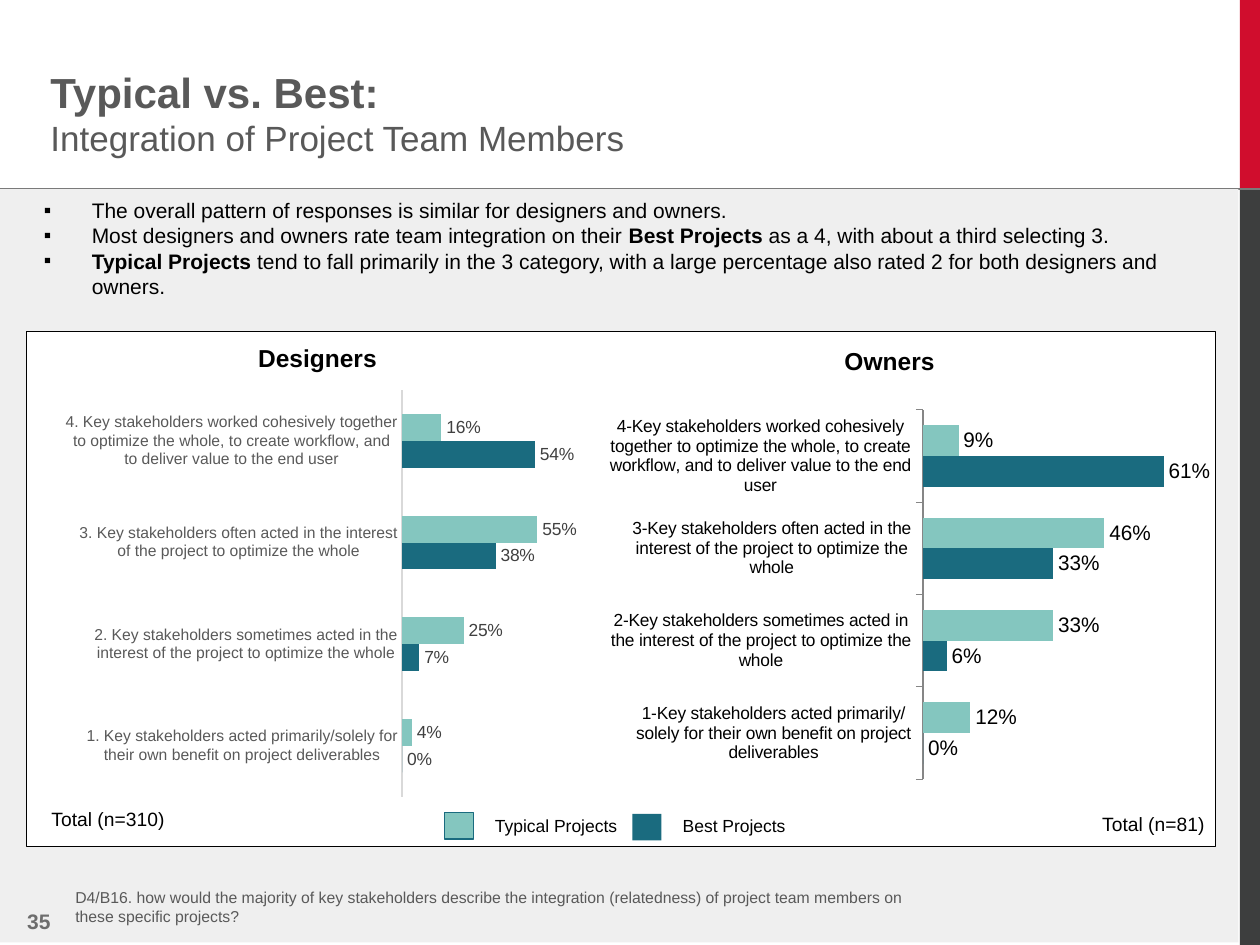
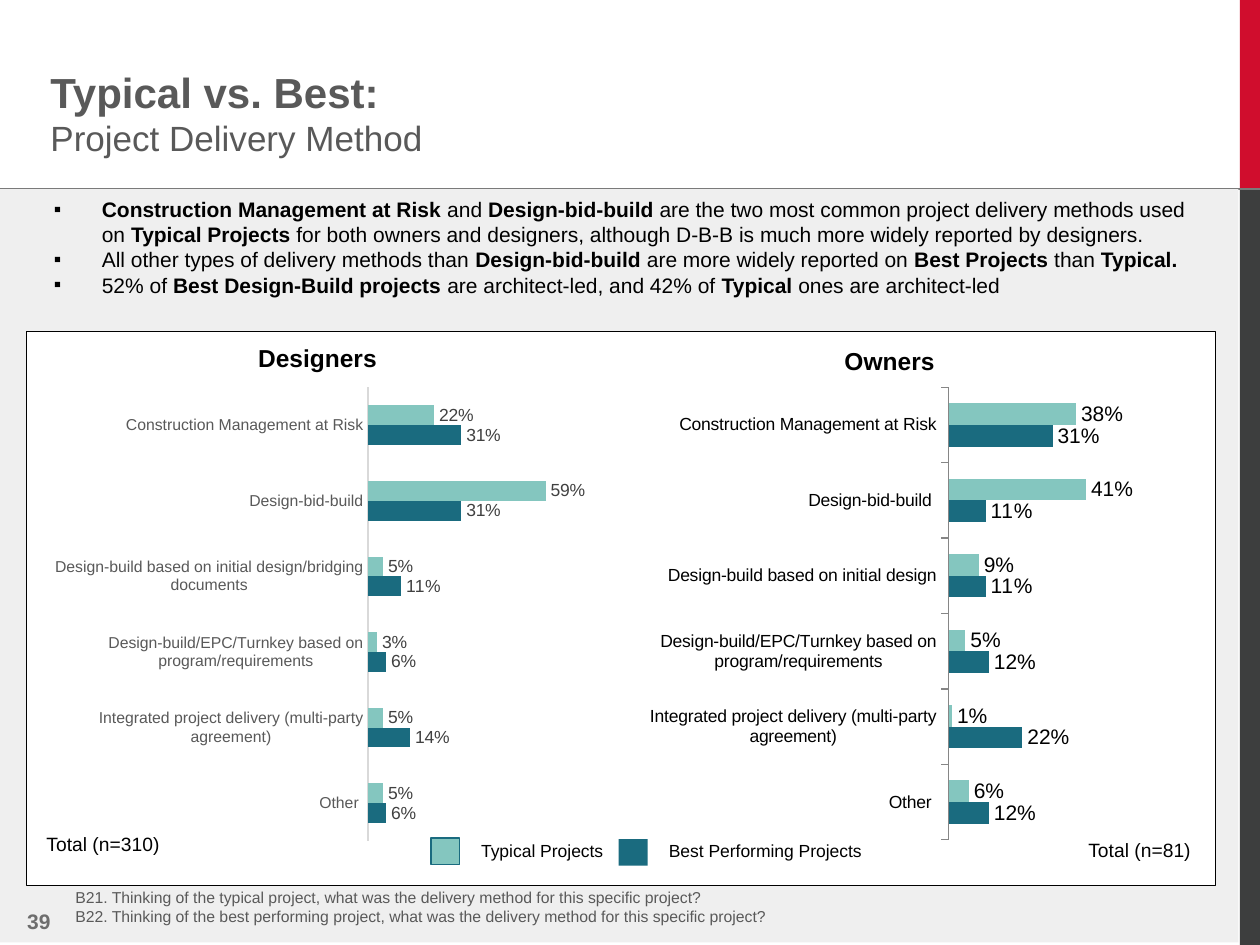
from lxml import etree
from pptx import Presentation
from pptx.chart.data import CategoryChartData
from pptx.dml.color import RGBColor
from pptx.enum.chart import XL_CHART_TYPE, XL_LABEL_POSITION, XL_TICK_MARK
from pptx.enum.shapes import MSO_CONNECTOR, MSO_SHAPE
from pptx.enum.text import MSO_ANCHOR, MSO_AUTO_SIZE, PP_ALIGN
from pptx.oxml.ns import qn
from pptx.util import Inches, Pt

RECTANGLE = MSO_SHAPE.RECTANGLE
BAR = XL_CHART_TYPE.BAR_CLUSTERED
LABEL_END = XL_LABEL_POSITION.OUTSIDE_END
TICK_OUT, TICK_NONE = XL_TICK_MARK.OUTSIDE, XL_TICK_MARK.NONE
LEFT, CENTER, RIGHT = PP_ALIGN.LEFT, PP_ALIGN.CENTER, PP_ALIGN.RIGHT

FONT = "Arial"
BLACK = RGBColor(0x00, 0x00, 0x00)
WHITE = RGBColor(0xFF, 0xFF, 0xFF)
RED = RGBColor(0xD0, 0x0D, 0x2D)
CHARCOAL = RGBColor(0x3D, 0x3E, 0x3E)
RULE_GRAY = RGBColor(0x7A, 0x7A, 0x7A)
PALE_GRAY = RGBColor(0xEF, 0xEF, 0xEF)
TEXT_GRAY = RGBColor(0x59, 0x59, 0x59)
NUMBER_GRAY = RGBColor(0x6D, 0x6D, 0x6D)
VALUE_GRAY = RGBColor(0x40, 0x40, 0x40)
AXIS_GRAY = RGBColor(0xD9, 0xD9, 0xD9)
OWNER_AXIS = RGBColor(0x86, 0x86, 0x86)
TYPICAL = RGBColor(0x84, 0xC6, 0xBF)
BEST = RGBColor(0x1A, 0x6B, 0x7F)

# Content: bold words stand between ** marks; chart rows are
# (answer, typical, best) from top to bottom
SLIDES = [
    {
        "number": "35",
        "topic": "Integration of Project Team Members",
        "points": [
            "The overall pattern of responses is similar for designers and owners.",
            "Most designers and owners rate team integration on their **Best Projects** "
            "as a 4, with about a third selecting 3.",
            "**Typical Projects** tend to fall primarily in the 3 category, with a large "
            "percentage also rated 2 for both designers and owners.",
        ],
        "points_at": (0.25, 1.52, 9.48, 1.31),
        "panel_height": 4.09,
        "designers": [
            ("4. Key stakeholders worked cohesively together to optimize the whole, "
             "to create workflow, and to deliver value to the end user", 0.16, 0.54),
            ("3. Key stakeholders often acted in the interest of the project "
             "to optimize the whole", 0.55, 0.38),
            ("2. Key stakeholders sometimes acted in the interest of the project "
             "to optimize the whole", 0.25, 0.07),
            ("1. Key stakeholders acted primarily/solely for their own benefit "
             "on project deliverables", 0.04, 0),
        ],
        "designers_at": (0.52, 3.03, 4.32, 3.36),
        "designers_max": 0.8,
        "owners": [
            ("4-Key stakeholders worked cohesively together to optimize the whole, "
             "to create workflow, and to deliver value to the end user", 0.09, 0.61),
            ("3-Key stakeholders often acted in the interest of the project "
             "to optimize the whole", 0.46, 0.33),
            ("2-Key stakeholders sometimes acted in the interest of the project "
             "to optimize the whole", 0.33, 0.06),
            ("1-Key stakeholders acted primarily/solely for their own benefit "
             "on project deliverables", 0.12, 0),
        ],
        "owners_at": (4.84, 3.09, 4.86, 3.39),
        "owners_plot": (0.506, 0.048, 0.456, 0.865),
        "owners_gap": 100,
        "best_label": "Best Projects",
        "legend_at": (3.53, 6.45),
        "designers_total_at": (0.31, 6.36),
        "owners_total_at": (8.18, 6.4),
        "questions": [
            "D4/B16. how would the majority of key stakeholders describe the integration "
            "(relatedness) of project team members on these specific projects?",
        ],
    },
    {
        "number": "39",
        "topic": "Project Delivery Method",
        "points": [
            "**Construction Management at Risk** and **Design-bid-build** are the two most "
            "common project delivery methods used on **Typical Projects** for both owners "
            "and designers, although D-B-B is much more widely reported by designers.",
            "All other types of delivery methods than **Design-bid-build **are more widely "
            "reported on **Best Projects** than **Typical.**",
            "52% of **Best Design-Build projects **are architect-led, and 42% of "
            "**Typical **ones are architect-led",
        ],
        "points_at": (0.33, 1.51, 9.31, 0.91),
        "panel_height": 4.4,
        "designers": [
            ("Construction Management at Risk", 0.22, 0.31),
            ("Design-bid-build", 0.59, 0.31),
            ("Design-build based on initial design/bridging documents", 0.05, 0.11),
            ("Design-build/EPC/Turnkey based on program/requirements", 0.03, 0.06),
            ("Integrated project delivery (multi-party agreement)", 0.05, 0.14),
            ("Other ", 0.05, 0.06),
        ],
        "designers_at": (0.35, 3, 4.33, 3.75),
        "designers_max": 0.7,
        "owners": [
            ("Construction Management at Risk", 0.38, 0.31),
            ("Design-bid-build ", 0.41, 0.11),
            ("Design-build based on initial design", 0.09, 0.11),
            ("Design-build/EPC/Turnkey based on program/requirements", 0.05, 0.12),
            ("Integrated project delivery (multi-party agreement)", 0.01, 0.22),
            ("Other ", 0.06, 0.12),
        ],
        "owners_at": (5.07, 3, 4.41, 3.74),
        "owners_plot": None,
        "owners_gap": 150,
        "best_label": "Best Performing Projects",
        "legend_at": (3.42, 6.65),
        "designers_total_at": (0.27, 6.56),
        "owners_total_at": (8.07, 6.6),
        "questions": [
            "B21. Thinking of the typical project, what was the delivery method "
            "for this specific project?",
            "B22. Thinking of the best performing project, what was the delivery method "
            "for this specific project?",
        ],
    },
]


def inches(lengths):
    return [Inches(length) for length in lengths]


def style(font, size, color, bold=False):
    font.name, font.size, font.bold = FONT, Pt(size), bold
    font.color.rgb = color


def add_box(slide, at, fill, line=None):
    box = slide.shapes.add_shape(RECTANGLE, *inches(at))
    box.shadow.inherit = False
    box.fill.solid()
    box.fill.fore_color.rgb = fill
    if line is None:
        box.line.fill.background()
    else:
        box.line.color.rgb = line
        box.line.width = Pt(0.75)


def add_text(slide, at, paragraphs, size, color=BLACK, bold=False, align=LEFT):
    frame = slide.shapes.add_textbox(*inches(at)).text_frame
    frame.word_wrap = True
    frame.text = "\n".join(paragraphs)
    for paragraph in frame.paragraphs:
        paragraph.alignment = align
        style(paragraph.runs[0].font, size, color, bold)


def add_frame(slide):
    """Side bands, rule under the title and pale content area."""
    add_box(slide, (9.84, 0, 0.16, 1.5), RED)
    add_box(slide, (9.84, 1.5, 0.16, 6), CHARCOAL)
    rule = slide.shapes.add_connector(MSO_CONNECTOR.STRAIGHT, *inches((10, 1.5, 0, 1.5)))
    rule.line.color.rgb = RULE_GRAY
    rule.line.width = Pt(1)
    etree.SubElement(rule._element.spPr, qn("a:effectLst"))
    add_box(slide, (0, 1.5, 9.83, 5.98), PALE_GRAY)


def add_title(slide, topic):
    title = slide.shapes.title
    title.left, title.top, title.width, title.height = inches((0.3, 0.47, 9.26, 0.84))
    frame = title.text_frame
    frame.text = "Typical vs. Best:\n" + topic
    frame.word_wrap = True
    frame.auto_size = MSO_AUTO_SIZE.NONE
    frame.vertical_anchor = MSO_ANCHOR.BOTTOM
    for paragraph, size, bold in zip(frame.paragraphs, (24, 20), (True, False)):
        paragraph.alignment = LEFT
        style(paragraph.runs[0].font, size, TEXT_GRAY, bold)


def add_points(slide, at, points):
    frame = slide.shapes.add_textbox(*inches(at)).text_frame
    frame.word_wrap = True
    for index, point in enumerate(points):
        paragraph = frame.add_paragraph() if index else frame.paragraphs[0]
        properties = paragraph._p.get_or_add_pPr()
        properties.set("marL", str(Inches(0.38)))
        properties.set("indent", str(-Inches(0.38)))
        bullet_color = etree.SubElement(properties, qn("a:buClr"))
        etree.SubElement(bullet_color, qn("a:srgbClr"), val=str(BLACK))
        etree.SubElement(properties, qn("a:buFont"), typeface=FONT)
        etree.SubElement(properties, qn("a:buChar"), char="▪")
        for part, words in enumerate(point.split("**")):
            if words:
                run = paragraph.add_run()
                run.text = words
                style(run.font, 12, BLACK, bold=part % 2 == 1)


def add_bars(slide, at, answers, series, gap, maximum, value_size, value_color):
    """Bar chart of (name, values, color) series without legend or value axis."""
    data = CategoryChartData(number_format="0%")
    data.categories = answers
    for name, values, _ in series:
        data.add_series(name, values)
    chart = slide.shapes.add_chart(BAR, *inches(at), data).chart
    chart.has_title = chart.has_legend = False
    style(chart.font, 10, BLACK)
    chart.value_axis.visible = False
    chart.value_axis.has_major_gridlines = False
    chart.value_axis.minimum_scale = 0
    chart.value_axis.maximum_scale = maximum
    plot = chart.plots[0]
    plot.gap_width = gap
    plot.vary_by_categories = False
    for bars, (_, _, color) in zip(plot.series, series):
        bars.invert_if_negative = False
        bars.format.fill.solid()
        bars.format.fill.fore_color.rgb = color
        labels = bars.data_labels
        labels.show_value = True
        labels.number_format, labels.number_format_is_linked = "0%", False
        labels.position = LABEL_END
        style(labels.font, value_size, value_color)
    return chart


def style_answers(chart, size, color, line_color, tick):
    axis = chart.category_axis
    axis.has_major_gridlines = False
    axis.major_tick_mark, axis.minor_tick_mark = tick, TICK_NONE
    axis.format.line.color.rgb = line_color
    axis.format.line.width = Pt(0.75)
    style(axis.tick_labels.font, size, color)


def place_plot(chart, fractions):
    """Fix the inner plot area as fractions of the chart."""
    plot_area = chart._chartSpace.chart.plotArea
    for automatic in plot_area.findall(qn("c:layout")):
        plot_area.remove(automatic)
    layout = etree.Element(qn("c:layout"))
    plot_area.insert(0, layout)
    manual = etree.SubElement(layout, qn("c:manualLayout"))
    settings = [("layoutTarget", "inner"), ("xMode", "edge"), ("yMode", "edge")]
    for tag, value in settings + list(zip("xywh", fractions)):
        etree.SubElement(manual, qn("c:" + tag), val=str(value))


def add_legend(slide, left, top, best_label):
    entries = [("Typical Projects", TYPICAL, BEST, 0, 0),
               (best_label, BEST, None, 1.49, 0.01)]
    for label, color, line, across, down in entries:
        add_box(slide, (left + across, top + down, 0.23, 0.21), color, line)
        add_text(slide, (left + across + 0.3, top - 0.03, 1.75, 0.27), [label], 10)


def add_charts(slide, content):
    # Designers: the axis runs upwards, so rows and series are reversed
    answers, typical, best = zip(*reversed(content["designers"]))
    series = [(content["best_label"], best, BEST), ("Typical Projects", typical, TYPICAL)]
    designers = add_bars(slide, content["designers_at"], answers, series, 182,
                         content["designers_max"], 10, VALUE_GRAY)
    style_answers(designers, 9, TEXT_GRAY, AXIS_GRAY, TICK_NONE)

    # Owners
    answers, typical, best = zip(*content["owners"])
    series = [("Typical Projects", typical, TYPICAL), (content["best_label"], best, BEST)]
    owners = add_bars(slide, content["owners_at"], answers, series,
                      content["owners_gap"], 0.7, 12, BLACK)
    style_answers(owners, 10, BLACK, OWNER_AXIS, TICK_OUT)
    owners.category_axis.reverse_order = True
    if content["owners_plot"]:
        place_plot(owners, content["owners_plot"])


def build_slide(deck, content):
    slide = deck.slides.add_slide(deck.slide_layouts[5])
    add_frame(slide)
    add_title(slide, content["topic"])
    add_box(slide, (0.21, 2.63, 9.44, content["panel_height"]), WHITE, BLACK)
    add_points(slide, content["points_at"], content["points"])
    add_charts(slide, content)

    # Chart headings, sample sizes and legend
    add_text(slide, (1.01, 2.67, 3.02, 0.34), ["Designers"], 14, bold=True, align=CENTER)
    add_text(slide, (5.55, 2.7, 3.02, 0.34), ["Owners"], 14, bold=True, align=CENTER)
    add_text(slide, (*content["designers_total_at"], 1.48, 0.29), ["Total (n=310)"], 11)
    add_text(slide, (*content["owners_total_at"], 1.48, 0.29), ["Total (n=81)"], 11,
             align=RIGHT)
    add_legend(slide, *content["legend_at"], content["best_label"])

    # Footer
    add_text(slide, (0.5, 7, 7.06, 0.4), content["questions"], 9, TEXT_GRAY)
    add_text(slide, (0, 7.16, 0.5, 0.22), [content["number"]], 12, NUMBER_GRAY, True, RIGHT)


def main():
    deck = Presentation()
    deck.slide_width, deck.slide_height = Inches(10), Inches(7.5)
    for content in SLIDES:
        build_slide(deck, content)
    deck.save("out.pptx")


if __name__ == "__main__":
    main()
